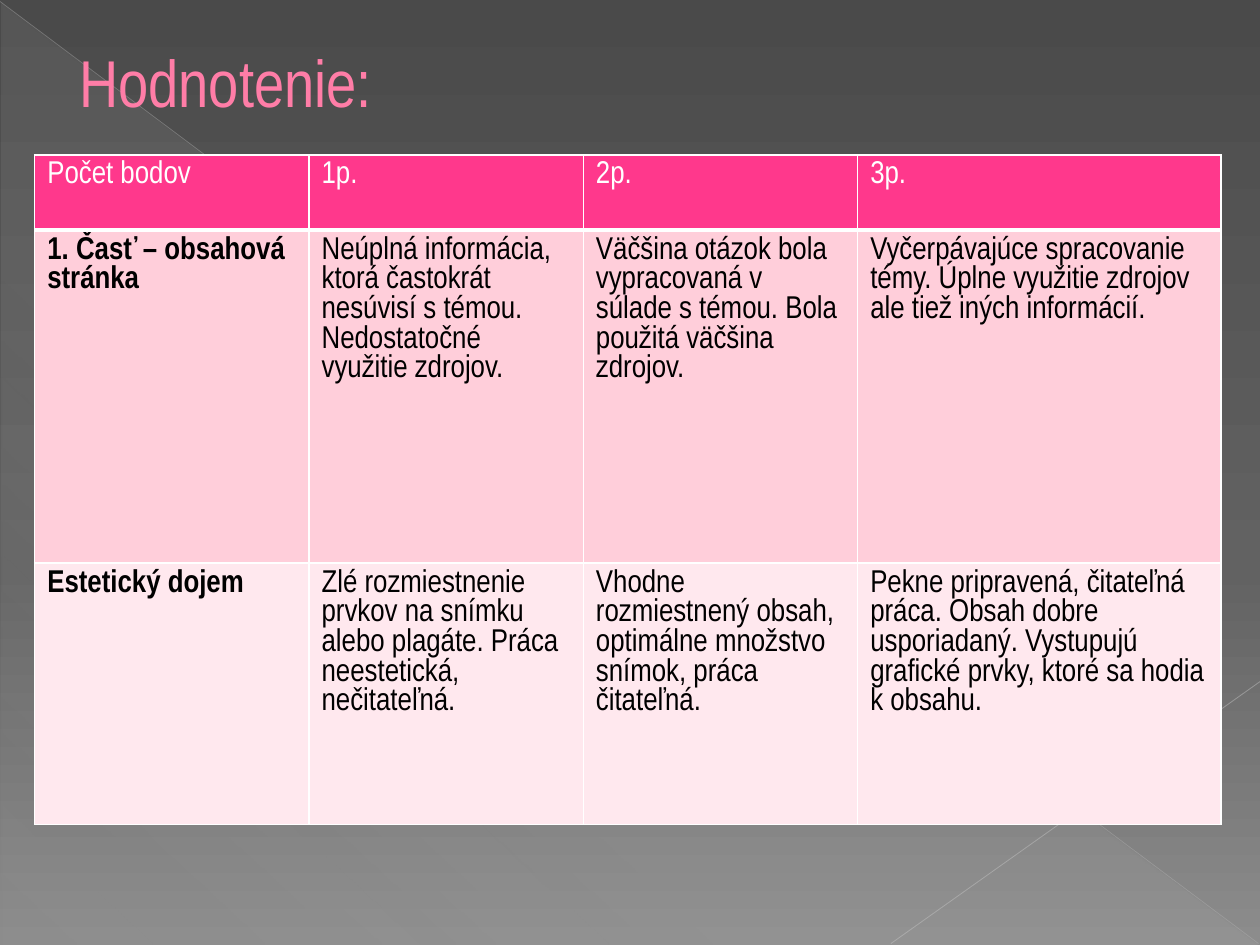
from lxml import etree
from pptx import Presentation
from pptx.dml.color import RGBColor
from pptx.enum import shapes, text
from pptx.oxml import ns
from pptx.util import Cm, Pt

FONT = "Arial Narrow"
WHITE = RGBColor(0xFF, 0xFF, 0xFF)
BLACK = RGBColor(0, 0, 0)
TITLE_PINK = RGBColor(0xFF, 0x7D, 0xA7)
HEADER_PINK = RGBColor(0xFF, 0x38, 0x8C)
ROW_FILLS = [HEADER_PINK, RGBColor(0xFF, 0xCE, 0xDA), RGBColor(0xFF, 0xE8, 0xEE)]
LIGHT_GREY = RGBColor(0xD2, 0xD2, 0xD2)

# Gradient stops: position %, colour, opacity %
BACKGROUND_STOPS = [
    (0, RGBColor(0x4A, 0x4A, 0x4A), 100),
    (60, RGBColor(0x62, 0x62, 0x62), 100),
    (100, RGBColor(0x8C, 0x8C, 0x8C), 100),
]
TRIANGLE_STOPS = [(0, LIGHT_GREY, 10), (70, LIGHT_GREY, 8), (100, LIGHT_GREY, 1)]

# Start and end in cm, colour, width in pt, opacity %
DIAGONALS = [
    ((0, 0.03), (25.37, 19.02), RGBColor(0xBF, 0xBF, 0xBF), 0.39, 35),
    ((25.4, 13.74), (17.96, 19.02), RGBColor(0xC6, 0xC6, 0xC6), 0.47, 45),
]

TITLE = "Hodnotenie:"
COLUMN_WIDTHS = [5.53, 5.53, 5.53, 7.32]
ROW_HEIGHTS = [1.52, 6.71, 5.27]
# Each cell is a list of paragraphs
ROWS = [
    [["Počet bodov"], ["1p."], ["2p."], ["3p."]],
    [
        ["1. Časť – obsahová stránka"],
        ["Neúplná informácia, ktorá častokrát nesúvisí s témou.",
         "Nedostatočné využitie zdrojov."],
        ["Väčšina otázok bola vypracovaná v súlade s témou. Bola použitá väčšina zdrojov."],
        ["Vyčerpávajúce spracovanie témy. Úplne využitie zdrojov ale tiež iných informácií."],
    ],
    [
        ["Estetický dojem"],
        ["Zlé rozmiestnenie prvkov na snímku alebo plagáte. Práca neestetická, nečitateľná."],
        ["Vhodne rozmiestnený obsah, optimálne množstvo snímok, práca čitateľná."],
        ["Pekne pripravená, čitateľná práca. Obsah dobre usporiadaný. "
         "Vystupujú grafické prvky, ktoré sa hodia k obsahu."],
    ],
]


def add_element(parent, tag, **attributes):
    element = etree.SubElement(parent, ns.qn(tag))
    for name, value in attributes.items():
        element.set(name, str(value))
    return element


def add_color(parent, color, opacity=100):
    element = add_element(parent, "a:srgbClr", val=color)
    if opacity < 100:
        add_element(element, "a:alpha", val=opacity * 1000)


def replace_with_gradient(solid_fill, stops, angle):
    gradient = etree.Element(ns.qn("a:gradFill"), rotWithShape="1")
    stop_list = add_element(gradient, "a:gsLst")
    for position, color, opacity in stops:
        add_color(add_element(stop_list, "a:gs", pos=position * 1000), color, opacity)
    add_element(gradient, "a:lin", ang=angle * 60000, scaled=0)
    solid_fill.getparent().replace(solid_fill, gradient)


def first_solid_fill(element):
    return next(element.iter(ns.qn("a:solidFill")))


def add_run(paragraph, content, size, color, bold=False):
    run = paragraph.add_run()
    run.text = content
    run.font.name = FONT
    run.font.size = Pt(size)
    run.font.bold = bold
    run.font.color.rgb = color


def add_borders(cell, bottom_width):
    """Draw white borders; they must precede the fill in the cell properties."""
    properties = cell._tc.get_or_add_tcPr()
    widths = {"a:lnL": 1, "a:lnR": 1, "a:lnT": 1, "a:lnB": bottom_width}
    for tag, width in widths.items():
        line = add_element(properties, tag, w=Pt(width))
        add_color(add_element(line, "a:solidFill"), WHITE)


def add_backdrop(slide):
    slide.background.fill.solid()
    slide.background.fill.fore_color.rgb = BACKGROUND_STOPS[0][1]
    replace_with_gradient(first_solid_fill(slide.element), BACKGROUND_STOPS, 90)

    triangle = slide.shapes.add_shape(
        shapes.MSO_SHAPE.RIGHT_TRIANGLE, Cm(0.03), Cm(0.05), Cm(25.35), Cm(19))
    triangle.shadow.inherit = False
    triangle.line.fill.background()
    triangle.fill.solid()
    triangle.fill.fore_color.rgb = LIGHT_GREY
    replace_with_gradient(first_solid_fill(triangle._element), TRIANGLE_STOPS, 133)

    for start, end, color, width, opacity in DIAGONALS:
        line = slide.shapes.add_connector(
            shapes.MSO_CONNECTOR.STRAIGHT, *map(Cm, start + end))
        line.line.width = Pt(width)
        line.line.color.rgb = color
        color_element = next(line._element.iter(ns.qn("a:srgbClr")))
        add_element(color_element, "a:alpha", val=opacity * 1000)
        add_element(line._element.spPr, "a:effectLst")


def add_title(slide):
    box = slide.shapes.add_textbox(0, Cm(0.76), Cm(22.86), Cm(1.75))
    frame = box.text_frame
    frame.word_wrap = True
    frame.vertical_anchor = text.MSO_ANCHOR.MIDDLE
    frame.margin_left = Cm(1.6)
    add_run(frame.paragraphs[0], TITLE, 37.8, TITLE_PINK)


def add_grading_table(slide):
    table = slide.shapes.add_table(
        len(ROWS), len(COLUMN_WIDTHS), Cm(0.7), Cm(3.12),
        Cm(sum(COLUMN_WIDTHS)), Cm(sum(ROW_HEIGHTS))).table
    table.horz_banding = False
    table.first_row = False
    for column, width in zip(table.columns, COLUMN_WIDTHS):
        column.width = Cm(width)
    for row_index, (row, height) in enumerate(zip(table.rows, ROW_HEIGHTS)):
        row.height = Cm(height)
        is_header = row_index == 0
        for column_index, cell in enumerate(row.cells):
            add_borders(cell, 3 if is_header else 1)
            cell.fill.solid()
            cell.fill.fore_color.rgb = ROW_FILLS[row_index]
            frame = cell.text_frame
            for index, content in enumerate(ROWS[row_index][column_index]):
                paragraph = frame.add_paragraph() if index else frame.paragraphs[0]
                add_run(paragraph, content, 18, WHITE if is_header else BLACK,
                        bold=column_index == 0 and not is_header)


def main():
    presentation = Presentation()
    presentation.slide_width = Cm(25.4)
    presentation.slide_height = Cm(19.05)
    slide = presentation.slides.add_slide(presentation.slide_layouts[6])
    add_backdrop(slide)
    add_title(slide)
    add_grading_table(slide)
    presentation.save("out.pptx")


if __name__ == "__main__":
    main()
